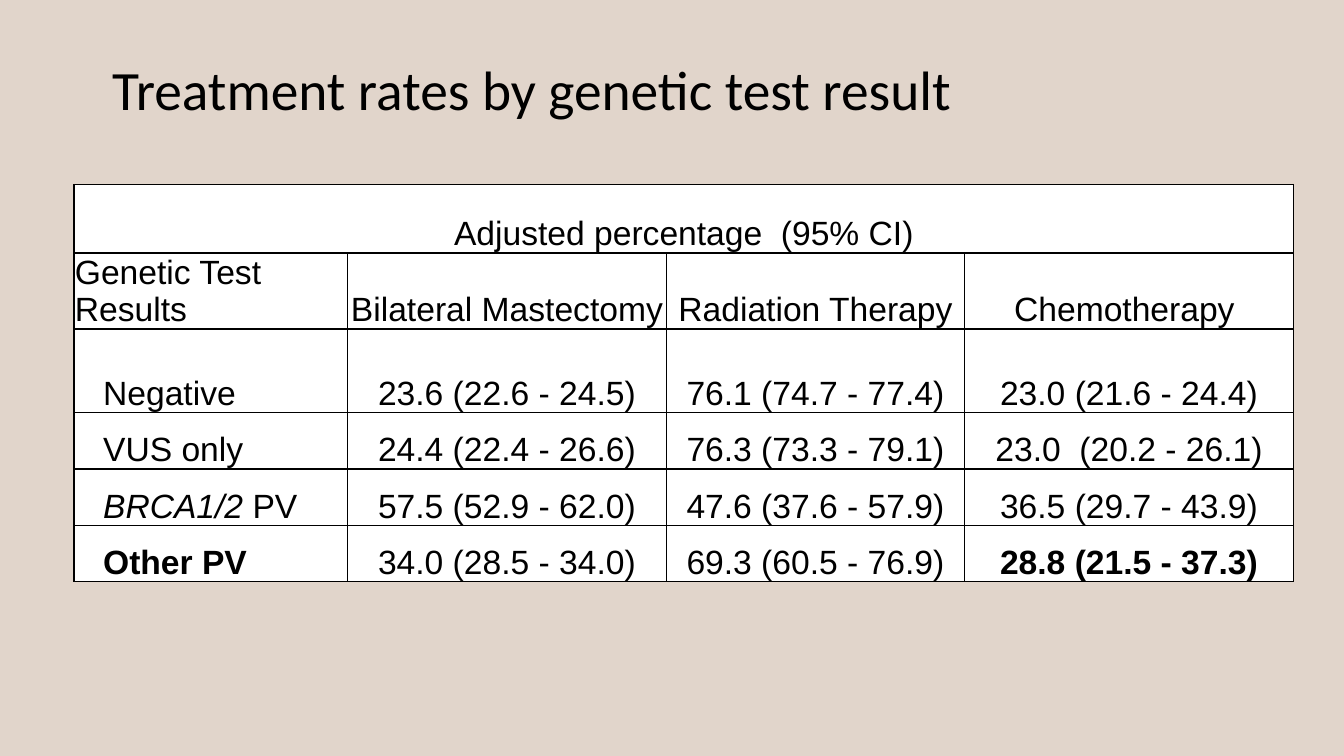
from lxml.etree import SubElement
from pptx import Presentation
from pptx.dml.color import RGBColor
from pptx.enum.text import MSO_ANCHOR as Anchor, PP_ALIGN as Align
from pptx.oxml.ns import qn
from pptx.util import Inches, Pt

SAND = RGBColor(0xE1, 0xD5, 0xCB)
WHITE = RGBColor(0xFF, 0xFF, 0xFF)
BLACK = RGBColor(0x00, 0x00, 0x00)

SLIDE_WIDTH, SLIDE_HEIGHT = Inches(13.33), Inches(7.5)
COLUMN_WIDTHS = (2.71, 3.17, 2.95, 3.27)
ROW_HEIGHTS = (0.68, 0.75, 0.83, 0.56, 0.56, 0.56)
LABEL_INDENT = Inches(0.28)

TITLE_FONT = {"name": "Calibri", "size": Pt(39.6)}
TABLE_FONT = {"name": "Arial", "size": Pt(24)}
BOLD = {"bold": True}
ITALIC = {"italic": True}
CELL_FORMAT = {
    "vertical_anchor": Anchor.BOTTOM,
    "margin_left": Inches(0.01),
    "margin_right": Inches(0.01),
    "margin_top": Inches(0.01),
    "margin_bottom": 0,
}

SPANNING_HEADER = "Adjusted percentage  (95% CI)"
TREATMENTS = ("Genetic Test Results", "Bilateral Mastectomy ",
              "Radiation Therapy", "Chemotherapy ")
# An entry is plain text, or a list of (text, font format) parts.
RATES = (
    ("Negative", "23.6 (22.6 - 24.5)", "76.1 (74.7 - 77.4)", "23.0 (21.6 - 24.4)"),
    ("VUS only", "24.4 (22.4 - 26.6)", "76.3 (73.3 - 79.1)", "23.0  (20.2 - 26.1)"),
    ([("BRCA1/2 ", ITALIC), ("PV", {})],
     "57.5 (52.9 - 62.0)", "47.6 (37.6 - 57.9)", "36.5 (29.7 - 43.9)"),
    ([("Other PV", BOLD)], "34.0 (28.5 - 34.0)", "69.3 (60.5 - 76.9)",
     [("28.8 (21.5 - 37.3)", BOLD)]),
)


def apply(target, settings):
    for attribute, value in settings.items():
        setattr(target, attribute, value)


def write(paragraph, entry, font_format):
    parts = [(entry, {})] if isinstance(entry, str) else entry
    for text, emphasis in parts:
        run = paragraph.add_run()
        run.text = text
        apply(run.font, {**font_format, **emphasis})
        run.font.color.rgb = BLACK


def add_borders(cell):
    properties = cell._tc.get_or_add_tcPr()
    for side in ("a:lnL", "a:lnR", "a:lnT", "a:lnB"):
        border = SubElement(properties, qn(side), w=str(Pt(1)))
        fill = SubElement(border, qn("a:solidFill"))
        SubElement(fill, qn("a:srgbClr"), val=str(BLACK))


def fill_cell(cell, entry, align, indent=0):
    apply(cell, CELL_FORMAT)
    add_borders(cell)
    cell.fill.solid()
    cell.fill.fore_color.rgb = WHITE
    paragraph = cell.text_frame.paragraphs[0]
    paragraph.alignment = align
    if indent:
        paragraph._p.get_or_add_pPr().set("marL", str(indent))
    write(paragraph, entry, TABLE_FONT)


def set_title(slide, text):
    title = slide.shapes.title
    apply(title, {
        "left": int(SLIDE_WIDTH * 0.076),
        "top": int(SLIDE_HEIGHT * 0.081),
        "width": int(SLIDE_WIDTH * 0.863),
        "height": int(SLIDE_HEIGHT * 0.084),
    })
    apply(title.text_frame, {"vertical_anchor": Anchor.MIDDLE, "word_wrap": True})
    paragraph = title.text_frame.paragraphs[0]
    apply(paragraph, {"alignment": Align.LEFT, "line_spacing": 0.9})
    write(paragraph, text, TITLE_FONT)


def add_rates_table(slide):
    rates = slide.shapes.add_table(
        len(ROW_HEIGHTS), len(COLUMN_WIDTHS),
        int(SLIDE_WIDTH * 0.055), int(SLIDE_HEIGHT * 0.244),
        Inches(sum(COLUMN_WIDTHS)), Inches(sum(ROW_HEIGHTS))).table
    apply(rates, {"first_row": False, "horz_banding": False})
    for column, width in zip(rates.columns, COLUMN_WIDTHS):
        column.width = Inches(width)
    for row, height in zip(rates.rows, ROW_HEIGHTS):
        row.height = Inches(height)

    rates.cell(0, 0).merge(rates.cell(0, len(COLUMN_WIDTHS) - 1))
    fill_cell(rates.cell(0, 0), SPANNING_HEADER, Align.CENTER)
    for spanned in range(1, len(COLUMN_WIDTHS)):
        add_borders(rates.cell(0, spanned))

    for r, entries in enumerate((TREATMENTS, *RATES), start=1):
        for c, entry in enumerate(entries):
            is_result = c == 0 and r > 1
            fill_cell(rates.cell(r, c), entry,
                      Align.CENTER if c else Align.LEFT,
                      LABEL_INDENT if is_result else 0)


def main():
    deck = Presentation()
    apply(deck, {"slide_width": SLIDE_WIDTH, "slide_height": SLIDE_HEIGHT})
    slide = deck.slides.add_slide(deck.slide_layouts.get_by_name("Title Only"))
    slide.background.fill.solid()
    slide.background.fill.fore_color.rgb = SAND
    set_title(slide, "Treatment rates by genetic test result")
    add_rates_table(slide)
    deck.save("out.pptx")


if __name__ == "__main__":
    main()
